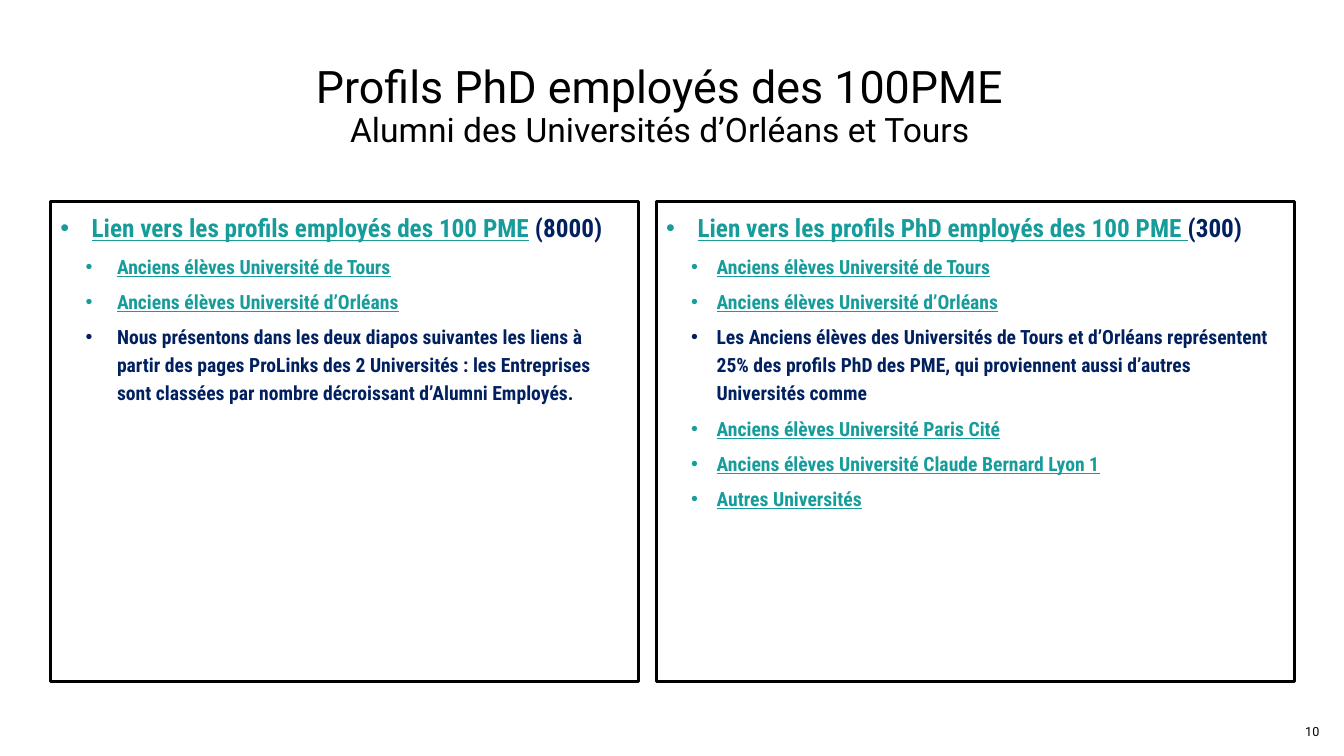
from dataclasses import dataclass

from lxml.etree import SubElement
from pptx import Presentation
from pptx.dml.color import RGBColor
from pptx.enum.shapes import MSO_SHAPE
from pptx.enum.text import MSO_ANCHOR, PP_ALIGN
from pptx.oxml.ns import qn
from pptx.slide import Slide
from pptx.text.text import Font, TextFrame
from pptx.util import Cm, Pt


@dataclass(frozen=True)
class Theme:
    black: str = "000000"
    teal: str = "169C9A"
    navy: str = "002060"
    sans: str = "Roboto"
    narrow: str = "Roboto Condensed"
    title: int = 32
    sub: int = 24
    head: int = 18
    item: int = 14
    page: int = 9


@dataclass(frozen=True)
class Item:
    text: str
    link: bool = True
    tail: str = ""


@dataclass(frozen=True)
class Panel:
    left: float
    width: float
    margin: float
    hang: float
    head: Item
    items: tuple[Item, ...]


THEME = Theme()
TOURS = Item("Anciens élèves Université de Tours")
ORLEANS = Item("Anciens élèves Université d’Orléans")
PANELS = (
    Panel(1.27, 14.83, 1.43, 0.79,
          Item("Lien vers les profils employés des 100 PME", tail=" (8000)"),
          (TOURS, ORLEANS,
           Item("Nous présentons dans les deux diapos suivantes les liens à "
                "partir des pages ProLinks des 2 Universités : les Entreprises "
                "sont classées par nombre décroissant d’Alumni Employés.",
                link=False))),
    Panel(16.54, 16.08, 1.27, 0.64,
          Item("Lien vers les profils PhD employés des 100 PME ", tail="(300)"),
          (TOURS, ORLEANS,
           Item("Les Anciens élèves des Universités de Tours et d’Orléans "
                "représentent 25% des profils PhD des PME, qui proviennent "
                "aussi d’autres Universités comme", link=False),
           Item("Anciens élèves Université Paris Cité"),
           Item("Anciens élèves Université Claude Bernard Lyon 1"),
           Item("Autres Universités"))),
)


def style(font: Font, name: str, size: int, color: str) -> None:
    font.name = name
    font.size = Pt(size)
    font.color.rgb = RGBColor.from_string(color)


def paint(font: Font, link: bool) -> None:
    font.color.rgb = RGBColor.from_string(THEME.teal if link else THEME.navy)
    font.underline = link


def add_item(frame: TextFrame, item: Item, margin: float, hang: float,
             size: int, first: bool = False) -> None:
    para = frame.paragraphs[0] if first else frame.add_paragraph()
    para.alignment = PP_ALIGN.LEFT
    para.line_spacing = 1.2
    para.space_before = Pt(0 if first else 5)
    para.level = 0 if first else 1

    # Bullet and hanging indent
    props = para._p.get_or_add_pPr()
    props.set("marL", str(Cm(margin)))
    props.set("indent", str(-Cm(hang)))
    tint = SubElement(props, qn("a:buClr"))
    SubElement(tint, qn("a:srgbClr"),
               val=THEME.teal if item.link else THEME.navy)
    SubElement(props, qn("a:buFont"), typeface="Arial")
    SubElement(props, qn("a:buChar"), char="•")

    # Text, with a plain tail after a link
    para.font.name = THEME.narrow
    para.font.size = Pt(size)
    para.font.bold = True
    run = para.add_run()
    run.text = item.text
    if item.tail:
        paint(run.font, item.link)
        tail = para.add_run()
        tail.text = item.tail
        paint(tail.font, False)
    else:
        paint(para.font, item.link)


def add_panel(slide: Slide, panel: Panel) -> None:
    box = slide.shapes.add_shape(MSO_SHAPE.RECTANGLE, Cm(panel.left), Cm(5.08),
                                 Cm(panel.width), Cm(12.09))
    box.shadow.inherit = False
    box.fill.background()
    box.line.color.rgb = RGBColor.from_string(THEME.black)
    box.line.width = Pt(2.25)
    frame = box.text_frame
    frame.word_wrap = True
    frame.vertical_anchor = MSO_ANCHOR.TOP
    add_item(frame, panel.head, 0.79, 0.79, THEME.head, first=True)
    for item in panel.items:
        add_item(frame, item, panel.margin, panel.hang, THEME.item)


def add_title(slide: Slide) -> None:
    box = slide.shapes.add_textbox(Cm(1.7), Cm(1.52), Cm(29.85), Cm(3.15))
    box.text_frame.word_wrap = True
    para = box.text_frame.paragraphs[0]
    para.alignment = PP_ALIGN.CENTER
    para.line_spacing = 0.9
    style(para.font, THEME.sans, THEME.title, THEME.black)
    para.add_run().text = "Profils PhD employés des 100PME"
    para.add_line_break()
    sub = para.add_run()
    sub.text = "Alumni des Universités d’Orléans et Tours"
    sub.font.size = Pt(THEME.sub)


def add_page(slide: Slide) -> None:
    box = slide.shapes.add_textbox(Cm(32.31), Cm(17.93), Cm(1.19), Cm(1.02))
    frame = box.text_frame
    frame.word_wrap = True
    frame.vertical_anchor = MSO_ANCHOR.MIDDLE
    para = frame.paragraphs[0]
    para.alignment = PP_ALIGN.RIGHT
    style(para.font, THEME.sans, THEME.page, THEME.black)
    para.add_run().text = "10"


def main() -> None:
    deck = Presentation()
    deck.slide_width, deck.slide_height = Cm(33.87), Cm(19.05)
    slide = deck.slides.add_slide(deck.slide_layouts[6])
    add_title(slide)
    for panel in PANELS:
        add_panel(slide, panel)
    add_page(slide)
    deck.save("out.pptx")


if __name__ == "__main__":
    main()
